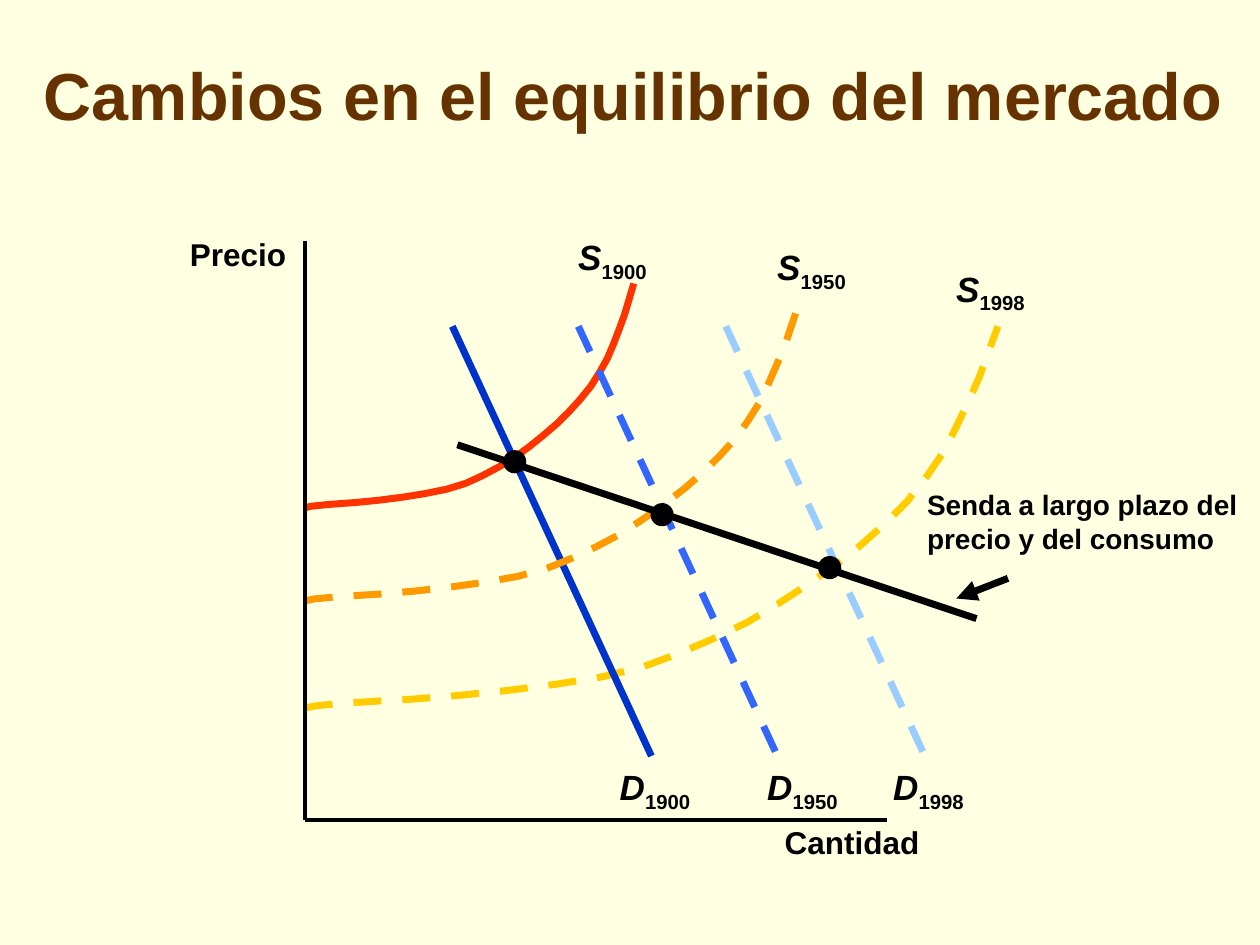
from pptx import Presentation
from pptx.dml.color import RGBColor
from pptx.enum import dml, shapes, text
from pptx.oxml.ns import qn
from pptx.util import Inches, Pt
from lxml import etree

BLACK = "000000"
CURVE_W, CURVE_H = 5.5, 3.03
SUPPLY_CURVE = [
    (0, 3.03), (0.1, 3.01), (0.22, 3), (0.34, 2.99), (0.49, 2.98), (0.66, 2.97),
    (0.84, 2.96), (1.22, 2.93), (1.61, 2.89), (2, 2.84), (2.37, 2.78),
    (2.53, 2.74), (2.69, 2.7), (2.96, 2.6), (3.24, 2.48), (3.51, 2.35),
    (3.76, 2.2), (3.99, 2.05), (4.22, 1.89), (4.42, 1.73), (4.61, 1.56),
    (4.78, 1.39), (4.93, 1.2), (5.06, 1.01), (5.16, 0.82), (5.26, 0.61),
    (5.35, 0.41), (5.5, 0),
]
# year, dashed, supply colour, curve (top, width, height), S label (x, y),
# demand colour, demand start x, D label x
MARKETS = [
    ("1998", True, "FFCC00", (0.68, 5.5, 3.03), (5.07, 0.16), "99CCFF", 3.34, 4.57),
    ("1900", False, "FF3300", (0.34, 2.61, 1.78), (2.07, -0.09), "0033CC", 1.17, 2.4),
    ("1950", True, "FF9900", (0.5, 3.92, 2.36), (3.65, -0.01), "3366FF", 2.17, 3.57),
]
EQUILIBRIA = [(1.58, 1.67), (2.75, 2.09), (4.08, 2.51)]


def rgb(value):
    return RGBColor.from_string(value)


def style_line(line, color, width, dashed=False):
    line.color.rgb = rgb(color)
    line.width = Pt(width)
    if dashed:
        line.dash_style = dml.MSO_LINE.DASH


def style_run(r, size, color=BLACK, italic=False):
    r.font.name = "Arial"
    r.font.size = Pt(size)
    r.font.bold = True
    r.font.italic = italic
    r.font.color.rgb = rgb(color)


def add_label(s, x, y, w, h, words, size, color=BLACK, align=text.PP_ALIGN.LEFT):
    sp = s.shapes.add_textbox(Inches(x), Inches(y), Inches(w), Inches(h))
    tf = sp.text_frame
    tf.word_wrap = False
    tf.text = words
    for p in tf.paragraphs:
        p.alignment = align
        for r in p.runs:
            style_run(r, size, color)
    return sp


def add_curve_label(s, x, y, letter, year):
    """Italic letter with the year as a subscript."""
    sp = s.shapes.add_textbox(Inches(x), Inches(y), Inches(0.91), Inches(0.43))
    sp.text_frame.word_wrap = True
    p = sp.text_frame.paragraphs[0]
    for words, italic in ((letter, True), (year, False)):
        r = p.add_run()
        r.text = words
        style_run(r, 20, italic=italic)
    r.font._element.set("baseline", "-25000")


def add_line(s, x1, y1, x2, y2, color, width, dashed=False, arrow=False):
    sp = s.shapes.add_connector(shapes.MSO_CONNECTOR.STRAIGHT, Inches(x1),
                                Inches(y1), Inches(x2), Inches(y2))
    style_line(sp.line, color, width, dashed)
    if arrow:
        etree.SubElement(sp.line._get_or_add_ln(), qn("a:tailEnd"), type="triangle")
    etree.SubElement(sp._element.spPr, qn("a:effectLst"))


def add_supply(s, x, y, w, h, color, dashed):
    """The common supply curve, scaled to the given box."""
    points = [(Inches(x + px * w / CURVE_W), Inches(y + py * h / CURVE_H))
              for px, py in SUPPLY_CURVE]
    builder = s.shapes.build_freeform(*points[0])
    builder.add_line_segments(points[1:], close=False)
    sp = builder.convert_to_shape()
    sp.shadow.inherit = False
    sp.fill.background()
    style_line(sp.line, color, 4, dashed)


def add_markets(s, x, y):
    for year, dashed, s_color, curve, s_label, d_color, d_x, d_label in MARKETS:
        top, w, h = curve
        add_supply(s, x, y + top, w, h, s_color, dashed)
        add_curve_label(s, x + s_label[0], y + s_label[1], "S", year)
        add_line(s, x + d_x, y + 0.68, x + d_x + 1.58, y + 4.09, d_color, 4, dashed)
        add_curve_label(s, x + d_label, y + 4.12, "D", year)


def add_long_run_path(s, x, y):
    add_line(s, x + 1.21, y + 1.62, x + 5.33, y + 3, BLACK, 4)
    for dx, dy in EQUILIBRIA:
        dot = s.shapes.add_shape(shapes.MSO_SHAPE.OVAL, Inches(x + dx),
                                 Inches(y + dy), Inches(0.17), Inches(0.17))
        dot.shadow.inherit = False
        dot.fill.solid()
        dot.fill.fore_color.rgb = rgb(BLACK)
        style_line(dot.line, BLACK, 1)
    add_label(s, x + 4.84, y + 1.91, 2.7, 0.63,
              "Senda a largo plazo del\nprecio y del consumo", 16)
    add_line(s, x + 5.58, y + 2.68, x + 5.17, y + 2.84, BLACK, 4, arrow=True)


def add_axes(s, x, y, w, h):
    add_line(s, x, y, x, y + h, BLACK, 2)
    add_line(s, x, y + h, x + w, y + h, BLACK, 2)
    add_label(s, x + w - 0.91, y + h - 0.03, 1.4, 0.4, "Cantidad", 18)
    add_label(s, x - 1.25, y - 0.09, 1.2, 0.4, "Precio", 18,
              align=text.PP_ALIGN.RIGHT)


def add_title(s, x, y, w, h):
    sp = add_label(s, x, y, w, h, "Cambios en el equilibrio del mercado", 38, "663300")
    sp.text_frame.word_wrap = True
    sp.text_frame.vertical_anchor = text.MSO_ANCHOR.BOTTOM


def main():
    prs = Presentation()
    prs.slide_width, prs.slide_height = Inches(10), Inches(7.5)
    s = prs.slides.add_slide(prs.slide_layouts[6])
    s.background.fill.solid()
    s.background.fill.fore_color.rgb = rgb("FFFFE1")
    x, y = 2.42, 1.91
    add_markets(s, x, y)
    add_long_run_path(s, x, y)
    add_title(s, 0.25, 0.32, 9.75, 0.79)
    add_axes(s, x, y, 4.62, 4.6)
    prs.save("out.pptx")


if __name__ == "__main__":
    main()
